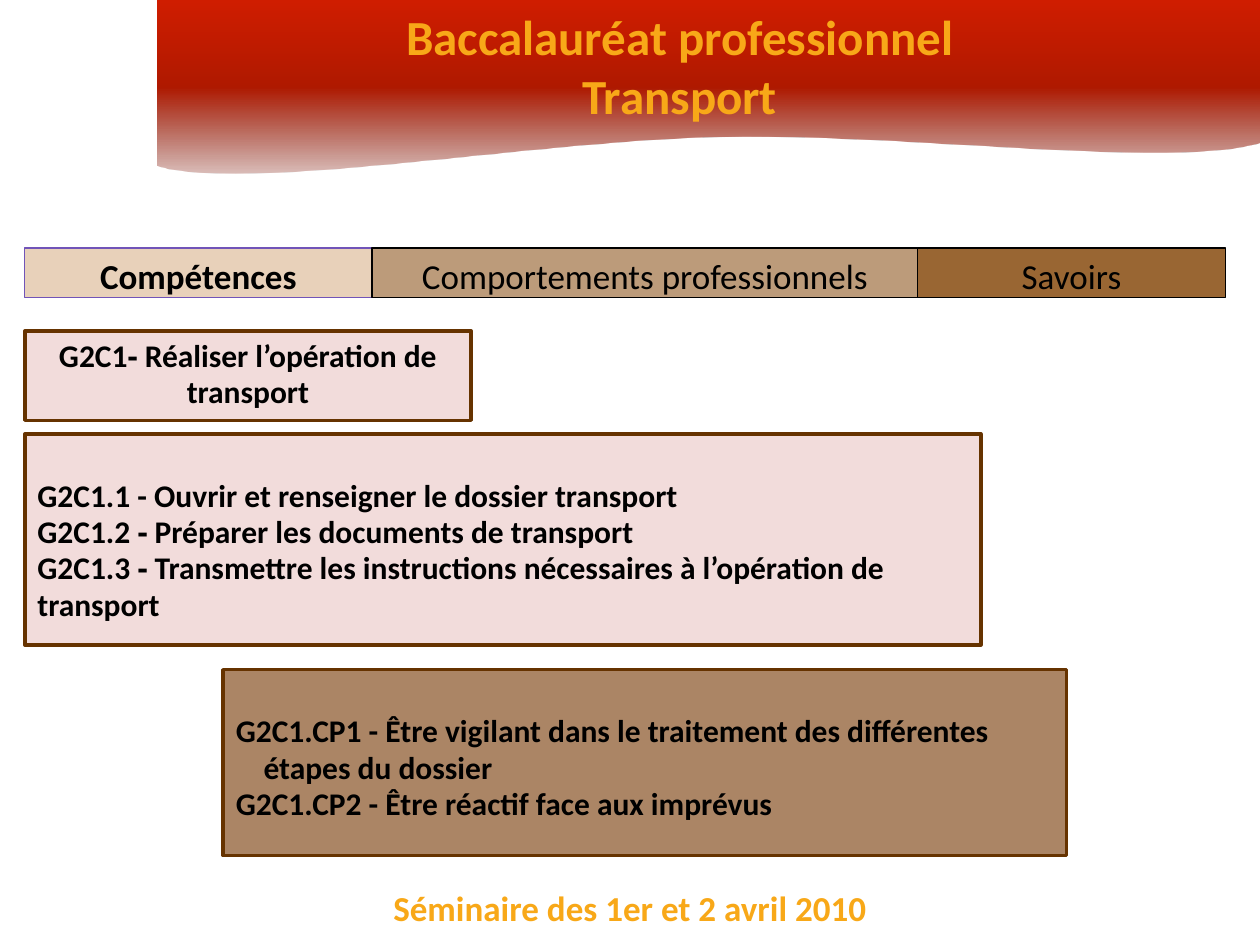
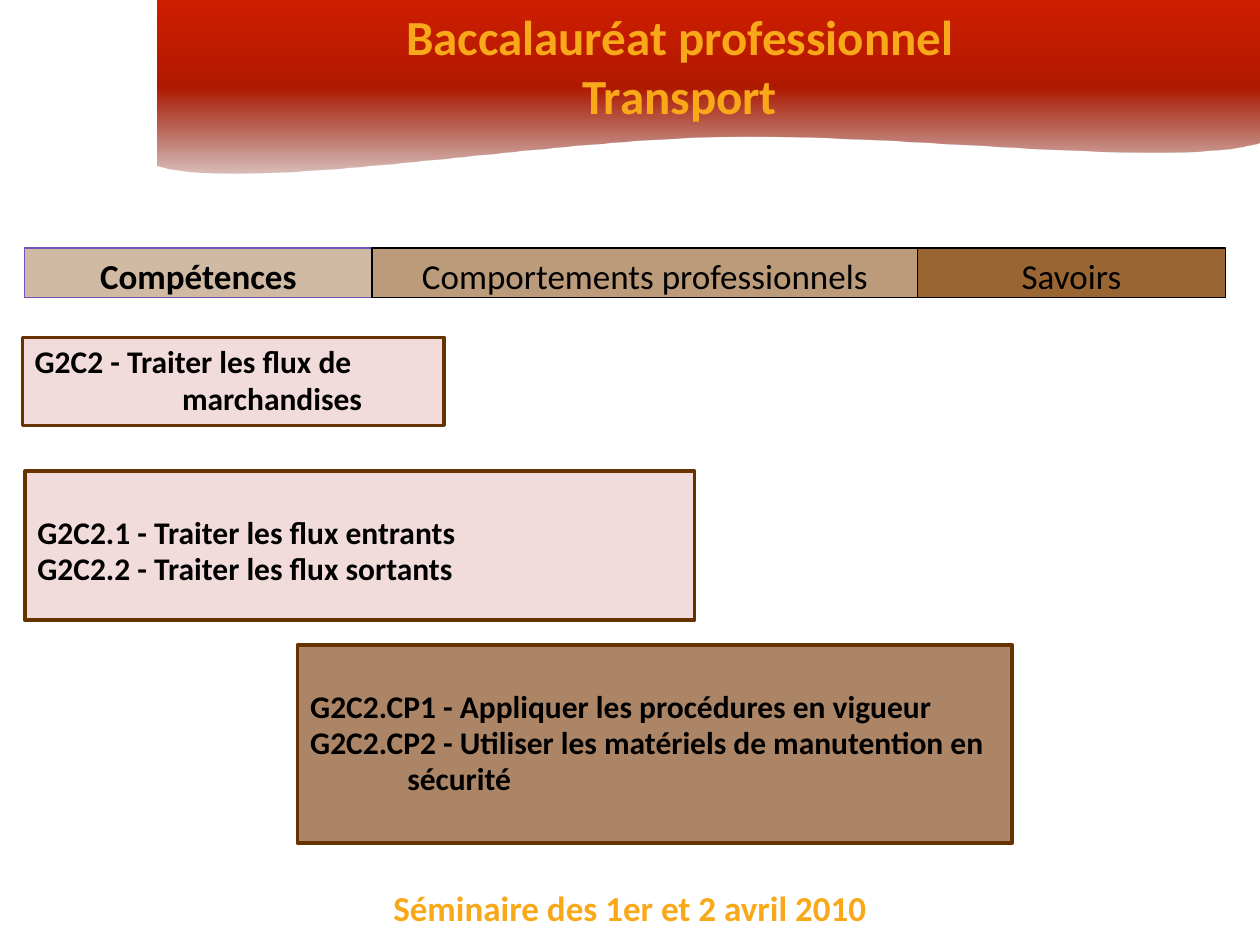
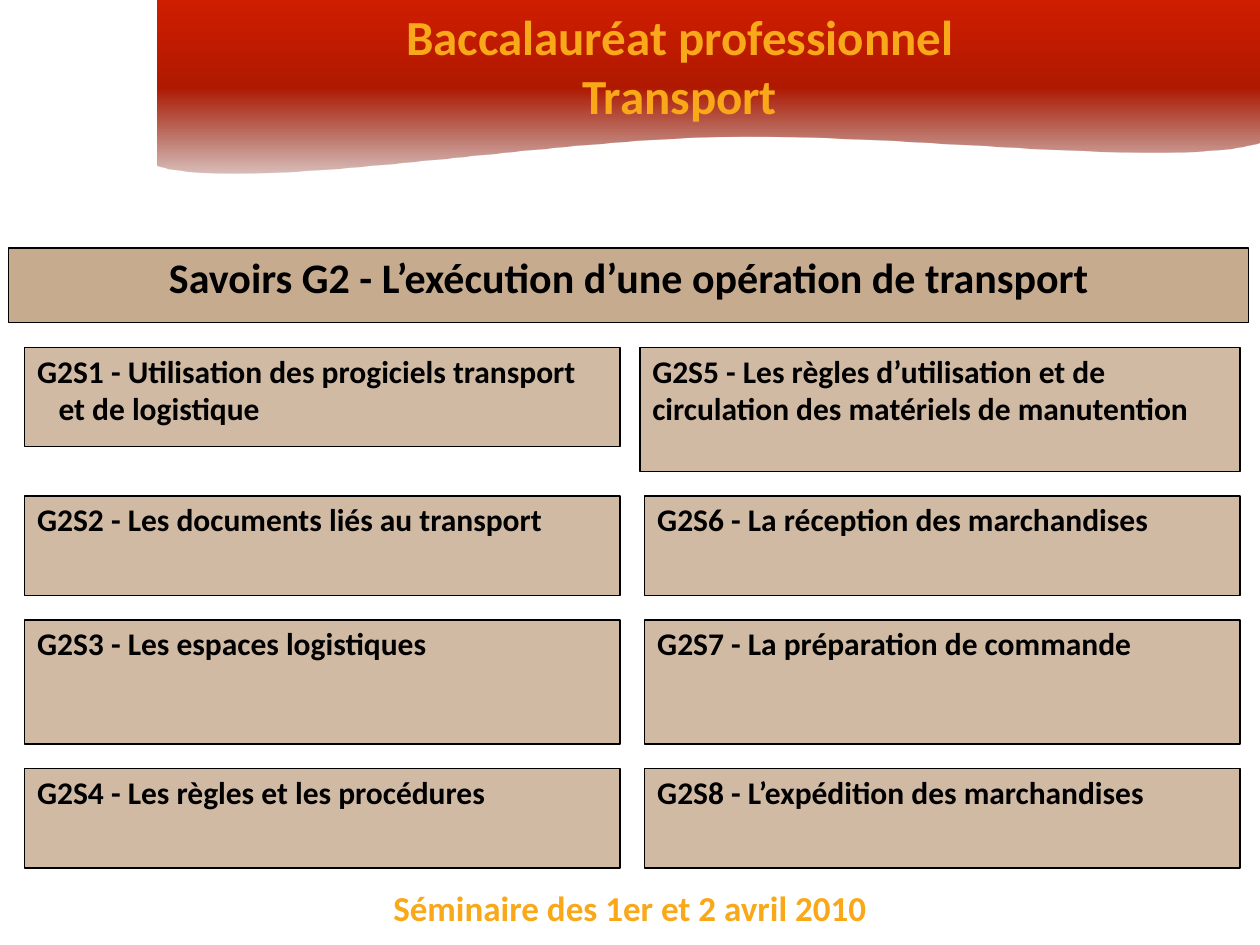
from lxml.etree import SubElement as Sub
from pptx import Presentation
from pptx.dml.color import RGBColor as RGB
from pptx.enum.shapes import MSO_SHAPE as Kind
from pptx.enum.text import MSO_ANCHOR as Anchor, MSO_AUTO_SIZE as Fit, PP_ALIGN as Align
from pptx.oxml.ns import qn
from pptx.util import Cm, Inches, Pt

UNIT = Cm(0.5)  # side of one grid cell
FONT = "Calibri"
GOLD = RGB(0xF8, 0xA8, 0x18)
BLACK = RGB(0, 0, 0)
ROSE = RGB(0xF2, 0xDC, 0xDB)
CLAY = RGB(0xAB, 0x85, 0x65)
BARK = RGB(0x66, 0x33, 0x00)
WOOD = RGB(0x99, 0x66, 0x33)
SAND = RGB(0xCC, 0x99, 0x66)
PLUM = RGB(0x71, 0x54, 0xB8)
DARK = RGB(0x7B, 0x11, 0x00)
RED = RGB(0xAF, 0x19, 0x00)
BRIGHT = RGB(0xD0, 0x1D, 0x00)

# Boxes are left, top, width, height in grid cells
BAND = (6.35, 0, 44.45, 7.77)
TITLE = (14.7, 0, 25.4, 5.3)
FOOT = (12.7, 35.5, 25.4, 2.23)
TABS = (1, 10, 48.4, 2)

# Lower edge of the band, as shares of its box: two curves of four points
WAVE = [
    [(1, .74), (.92, .88), (.68, .69), (.51, .71)],
    [(.51, .71), (.34, .73), (.08, 1), (0, .86)],
]


def grid(box):
    return [round(n * UNIT) for n in box]


def place(shape, box):
    shape.left, shape.top, shape.width, shape.height = grid(box)


def fade(parent, share):
    Sub(parent, qn("a:alpha"), val=str(share * 1000))


def write(shape, text, size, color=BLACK, bold=True, align=Align.LEFT,
          pitch=1, hang=0, top=.05):
    frame = shape.text_frame
    frame.text = text
    frame.word_wrap = True
    frame.auto_size = Fit.NONE
    frame.vertical_anchor = Anchor.TOP
    frame.margin_left = frame.margin_right = Inches(.1)
    frame.margin_top, frame.margin_bottom = Inches(top), Inches(.05)
    for para in frame.paragraphs:
        props = para._p.get_or_add_pPr()
        props.set("marL", str(Inches(hang)))
        props.set("indent", str(-Inches(hang)))
        Sub(props, qn("a:buNone"))
        para.alignment, para.line_spacing = align, pitch
        para.space_before = para.space_after = Pt(0)
        for run in para.runs:
            font = run.font
            font.name, font.size, font.bold = FONT, Pt(size), bold
            font.color.rgb = color


def paint(shape, fill, line, width, share=100):
    shape.fill.solid()
    shape.fill.fore_color.rgb = fill
    if share < 100:
        fade(shape.fill._xPr.find(".//" + qn("a:srgbClr")), share)
    shape.line.color.rgb = line
    shape.line.width = Pt(width)


def block(slide, box, fill, line=BLACK, width=.75, share=100, kind=Kind.FLOWCHART_PROCESS):
    shape = slide.shapes.add_shape(kind, *grid(box))
    shape.shadow.inherit = False
    paint(shape, fill, line, width, share)
    return shape


def curve(points, steps=24):
    for i in range(1, steps + 1):
        t = i / steps
        parts = ((1 - t) ** 3, 3 * t * (1 - t) ** 2, 3 * t * t * (1 - t), t ** 3)
        yield tuple(sum(k * p[axis] for k, p in zip(parts, points)) for axis in (0, 1))


def band(slide, box):
    left, top, width, height = grid(box)
    edge = [(1, 0), WAVE[0][0]] + [p for points in WAVE for p in curve(points)]
    pen = slide.shapes.build_freeform(left, top)
    pen.add_line_segments([(left + x * width, top + y * height) for x, y in edge])
    shape = pen.convert_to_shape()
    shape.shadow.inherit = False
    shape.line.fill.background()
    shape.fill.gradient()
    shape.fill.gradient_angle = 90
    stops = shape.element.find(".//" + qn("a:gsLst"))
    stops.clear()
    for pos, color, share in ((0, DARK, 27), (50, RED, 100), (100, BRIGHT, 100)):
        stop = Sub(stops, qn("a:gs"), pos=str(pos * 1000))
        tint = Sub(stop, qn("a:srgbClr"), val=str(color))
        if share < 100:
            fade(tint, share)
    return shape


def start(deck, layout):
    """Add a slide with the shared band, title and footer."""
    slide = deck.slides.add_slide(deck.slide_layouts[layout])
    title = slide.shapes.title
    place(title, TITLE)
    write(title, "Baccalauréat professionnel\nTransport", 28, GOLD, align=Align.CENTER)
    title.element.addprevious(band(slide, BAND).element)
    foot = slide.shapes.add_textbox(*grid(FOOT))
    write(foot, "Séminaire des 1er et 2 avril 2010", 20, GOLD, align=Align.CENTER)
    return slide


def tabs(slide, box, first):
    left, top, _, height = box
    cells = [
        ("Compétences", 14, first, 45, PLUM),
        ("Comportements professionnels", 22, WOOD, 65, BLACK),
        ("Savoirs", 12.4, WOOD, 100, BLACK),
    ]
    for i, (text, width, fill, share, line) in enumerate(cells):
        cell = block(slide, (left, top, width, height), fill, line, share=share)
        write(cell, text, 20, bold=i == 0, align=Align.CENTER)
        left += width


def skills(deck, first, head, tasks, habits):
    """Each part is a box, its text and its text settings."""
    slide = start(deck, 3)
    tabs(slide, TABS, first)
    # Main skill
    box, text, style = head
    write(block(slide, box, ROSE, BARK, 2, kind=Kind.RECTANGLE), text, 18,
          pitch=.96, top=.06, **style)
    # Lists of tasks and of professional habits
    for slot, part, fill in ((1, tasks, ROSE), (2, habits, CLAY)):
        box, text, style = part
        body = slide.placeholders[slot]
        place(body, box)
        paint(body, fill, BARK, 2)
        write(body, text, 18, pitch=.96, top=.35, **style)


def topics(deck, head, pairs):
    slide = start(deck, 5)
    bar = block(slide, (.35, 10, 50, 3), WOOD, share=55)
    write(bar, head, 24, align=Align.CENTER, pitch=.98)
    # Two columns; the first right-hand box is a little larger
    rows = [(14, 4), (20, 4), (25, 5), (31, 4)]
    for i, ((top, height), pair) in enumerate(zip(rows, pairs)):
        right = (25.8, top, 24.2, 5) if i == 0 else (26, top, 24, height)
        for box, text in zip([(1, top, 24, height), right], pair):
            write(block(slide, box, WOOD, share=45), text, 18, pitch=.98, hang=.17 if "\v" in text else 0)


def main():
    deck = Presentation()
    deck.slide_width, deck.slide_height = Inches(10), Inches(7.5)
    skills(
        deck, SAND,
        ((1, 13.35, 18, 3.6), "G2C1‐ Réaliser l’opération de transport",
         {"align": Align.CENTER}),
        ((1, 17.5, 38.55, 8.5),
         "G2C1.1 - Ouvrir et renseigner le dossier transport\n"
         "G2C1.2 ‐ Préparer les documents de transport\n"
         "G2C1.3 ‐ Transmettre les instructions nécessaires à l’opération de transport", {}),
        ((9, 27, 34, 7.5),
         "G2C1.CP1 - Être vigilant dans le traitement des différentes\vétapes du dossier\n"
         "G2C1.CP2 - Être réactif face aux imprévus", {"hang": .22}))
    skills(
        deck, WOOD,
        ((.9, 13.6, 17, 3.55), "G2C2 - Traiter les flux de\vmarchandises", {"hang": 1.17}),
        ((1, 19, 27, 6),
         "G2C2.1 - Traiter les flux entrants\nG2C2.2 - Traiter les flux sortants", {}),
        ((12, 26, 28.8, 8),
         "G2C2.CP1 - Appliquer les procédures en vigueur\n"
         "G2C2.CP2 - Utiliser les matériels de manutention en\vsécurité", {"hang": .77}))
    topics(deck, "Savoirs G2 - L’exécution d’une opération de transport", [
        ("G2S1 - Utilisation des progiciels transport\vet de logistique",
         "G2S5 - Les règles d’utilisation et de circulation des matériels de manutention"),
        ("G2S2 - Les documents liés au transport", "G2S6 - La réception des marchandises"),
        ("G2S3 - Les espaces logistiques", "G2S7 - La préparation de commande"),
        ("G2S4 - Les règles et les procédures", "G2S8 - L’expédition des marchandises"),
    ])
    deck.save("out.pptx")


if __name__ == "__main__":
    main()
